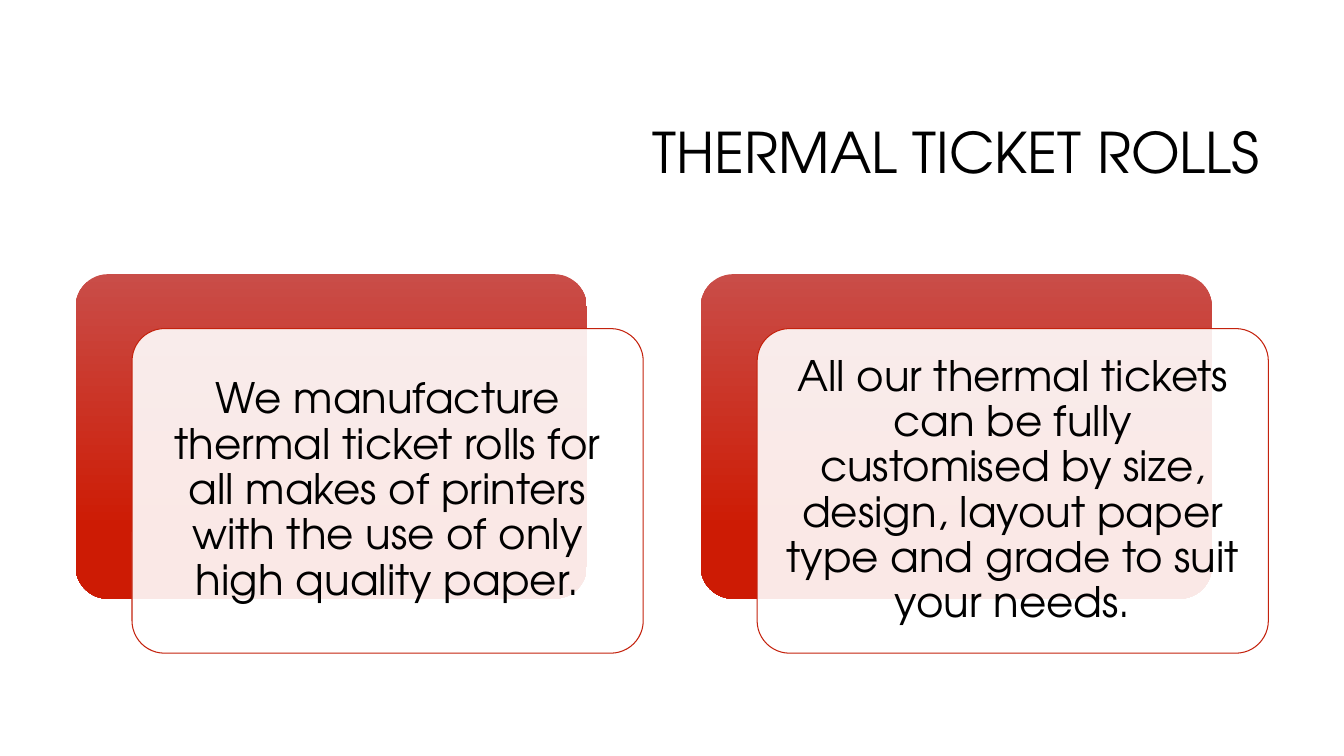
from pptx import Presentation
from pptx import util as u
from pptx.dml.color import RGBColor
from pptx.enum import shapes, text
from pptx.oxml.ns import qn
from lxml import etree


def rgb(code):
    return RGBColor.from_string(code)


def put(item, values):
    """Set each named value as an attribute of the item."""
    for name, value in values.items():
        setattr(item, name, value)


class Deck:
    font = "TeX Gyre Adventor"
    ink = "000000"
    edge = "C4220D"
    fade = [(0, "C94D48"), (0.78, "CD1B04")]
    veil = 90  # percent opacity of the front card

    def __init__(self, wide, high):
        self.show = Presentation()
        put(self.show, {"slide_width": u.Inches(wide), "slide_height": u.Inches(high)})
        self.slide = self.show.slides.add_slide(self.show.slide_layouts[6])

    def label(self, shape, words, size, align, across, down):
        """Fill a shape with one styled paragraph, given its side and end margins."""
        frame = shape.text_frame
        put(frame, {
            "word_wrap": True,
            "vertical_anchor": text.MSO_ANCHOR.MIDDLE,
            "margin_left": u.Inches(across),
            "margin_right": u.Inches(across),
            "margin_top": u.Inches(down),
            "margin_bottom": u.Inches(down),
        })
        para = frame.paragraphs[0]
        put(para, {"text": words, "alignment": align, "line_spacing": 0.9})
        font = para.runs[0].font
        put(font, {"name": self.font, "size": u.Pt(size)})
        font.color.rgb = rgb(self.ink)

    def title(self, words, *box):
        shape = self.slide.shapes.add_textbox(*map(u.Inches, box))
        self.label(shape, words, 40, text.PP_ALIGN.RIGHT, 0.1, 0.05)

    def block(self, *box):
        """Add a plain rounded box."""
        shape = self.slide.shapes.add_shape(
            shapes.MSO_SHAPE.ROUNDED_RECTANGLE, *map(u.Inches, box))
        shape.shadow.inherit = False
        shape.adjustments[0] = 0.1
        return shape

    def back(self, *box):
        """Add the red box that lies behind a card."""
        shape = self.block(*box)
        shape.line.fill.background()
        shape.fill.gradient()
        shape.fill.gradient_angle = 270
        for stop, (place, code) in zip(shape.fill.gradient_stops, self.fade):
            stop.position = place
            stop.color.rgb = rgb(code)

    def card(self, words, *box):
        shape = self.block(*box)
        shape.fill.solid()
        shape.fill.fore_color.rgb = rgb("FFFFFF")
        color = shape.element.spPr.find(f".//{qn('a:srgbClr')}")
        etree.SubElement(color, qn("a:alpha"), val=str(self.veil * 1000))
        shape.line.color.rgb = rgb(self.edge)
        shape.line.width = u.Pt(0.75)
        self.label(shape, words, 30, text.PP_ALIGN.CENTER, 0.12, 0.12)


def main():
    deck = Deck(13.33, 7.5)
    deck.title("THERMAL TICKET ROLLS", 3.17, 0.84, 9.42, 1.41)
    left, top, wide, high = 0.75, 2.72, 5.07, 3.22
    step, right, down = 6.2, 0.56, 0.54
    notes = [
        "We manufacture thermal ticket rolls for all makes of printers "
        "with the use of only high quality paper.",
        "All our thermal tickets can be fully customised by size, design, "
        "layout paper type and grade to suit your needs.",
    ]
    for i, words in enumerate(notes):
        x = left + i * step
        deck.back(x, top, wide, high)
        deck.card(words, x + right, top + down, wide, high)
    deck.show.save("out.pptx")


if __name__ == "__main__":
    main()
